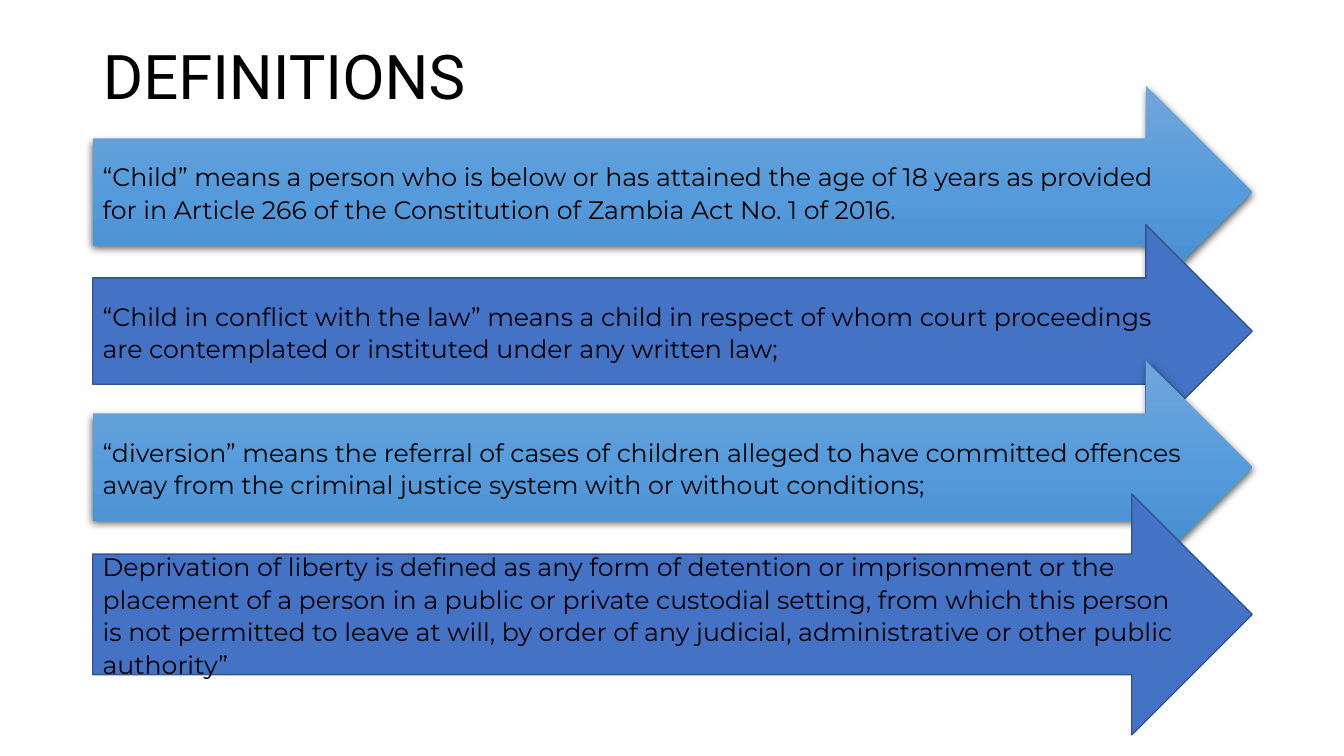
"""Build the DEFINITIONS slide with four stacked arrows."""
from copy import deepcopy
from dataclasses import dataclass

from lxml.etree import SubElement
from pptx import Presentation
from pptx.dml.color import RGBColor
from pptx.enum.shapes import MSO_SHAPE
from pptx.enum.text import MSO_ANCHOR, MSO_AUTO_SIZE, PP_ALIGN
from pptx.oxml.ns import qn
from pptx.shapes.autoshape import Shape
from pptx.slide import Slide
from pptx.util import Inches, Pt

BLACK = RGBColor(0x00, 0x00, 0x00)
BLUE = RGBColor(0x44, 0x72, 0xC4)
OUTLINE = RGBColor(0x32, 0x54, 0x91)
GRADIENT = (
    RGBColor(0x71, 0xA6, 0xDB),
    RGBColor(0x55, 0x9B, 0xDB),
    RGBColor(0x44, 0x8A, 0xCA),
)
LEFT = Inches(0.92)
WIDTH = Inches(11.5)


@dataclass
class Definition:
    """Text and placement of one arrow, in inches."""
    text: str
    top: float
    height: float = 2.11
    glossy: bool = False


DEFINITIONS = [
    Definition("“Child” means a person who is below or has attained the age of 18 years "
               "as provided for in Article 266 of the Constitution of Zambia Act No. 1 of 2016.",
               0.85, glossy=True),
    Definition("“Child in conflict with the law” means a child in respect of whom court "
               "proceedings are contemplated or instituted under any written law;", 2.23),
    Definition("“diversion” means the referral of cases of children alleged to have committed "
               "offences away from the criminal justice system with or without conditions;",
               3.58, glossy=True),
    Definition("Deprivation of liberty is defined as any form of detention or imprisonment or "
               "the placement of a person in a public or private custodial setting, from which "
               "this person is not permitted to leave at will, by order of any judicial, "
               "administrative or other public authority”", 4.9, 2.39),
]


def format_text(s: Shape, text: str, font: str, size: int, spacing: float) -> None:
    """Write one left-aligned, vertically centred paragraph."""
    tf = s.text_frame
    tf.text = text
    tf.word_wrap = True
    tf.auto_size = MSO_AUTO_SIZE.NONE
    tf.vertical_anchor = MSO_ANCHOR.MIDDLE
    p = tf.paragraphs[0]
    p.alignment = PP_ALIGN.LEFT
    p.line_spacing = spacing
    p.font.name = font
    p.font.size = Pt(size)
    p.font.color.rgb = BLACK


def add_gloss(s: Shape) -> None:
    """Give an arrow a three-stop vertical gradient and a soft shadow."""
    s.fill.gradient()
    s.fill.gradient_angle = 270
    first = s.element.spPr.find(".//" + qn("a:gs"))
    first.addnext(deepcopy(first))
    for i, (stop, color) in enumerate(zip(s.fill.gradient_stops, GRADIENT)):
        stop.position = i / 2
        stop.color.rgb = color
    s.line.fill.background()
    effects = s.element.spPr.find(qn("a:effectLst"))
    shadow = SubElement(effects, qn("a:outerShdw"), blurRad=str(Pt(4.5)),
                        dist=str(Pt(1.5)), dir="5400000", algn="ctr", rotWithShape="0")
    color = SubElement(shadow, qn("a:srgbClr"), val=str(BLACK))
    SubElement(color, qn("a:alpha"), val="63000")


def add_definition(slide: Slide, d: Definition) -> None:
    """Draw one arrow with its definition."""
    s = slide.shapes.add_shape(MSO_SHAPE.RIGHT_ARROW, LEFT, Inches(d.top),
                               WIDTH, Inches(d.height))
    s.shadow.inherit = False
    if d.glossy:
        add_gloss(s)
    else:
        s.fill.solid()
        s.fill.fore_color.rgb = BLUE
        s.line.color.rgb = OUTLINE
        s.line.width = Pt(1)
    format_text(s, d.text, "Montserrat", 18, 1.07)
    s.text_frame.paragraphs[0].space_after = Pt(8)


def main() -> None:
    """Create and save the presentation."""
    prs = Presentation()
    prs.slide_width = Inches(13.33)
    prs.slide_height = Inches(7.5)
    slide = prs.slides.add_slide(prs.slide_layouts[5])
    title = slide.shapes.title
    title.left, title.top = LEFT, Inches(0.06)
    title.width, title.height = WIDTH, Inches(1.45)
    format_text(title, "DEFINITIONS", "Roboto", 44, 0.9)
    for d in DEFINITIONS:
        add_definition(slide, d)
    prs.save("out.pptx")


if __name__ == "__main__":
    main()
